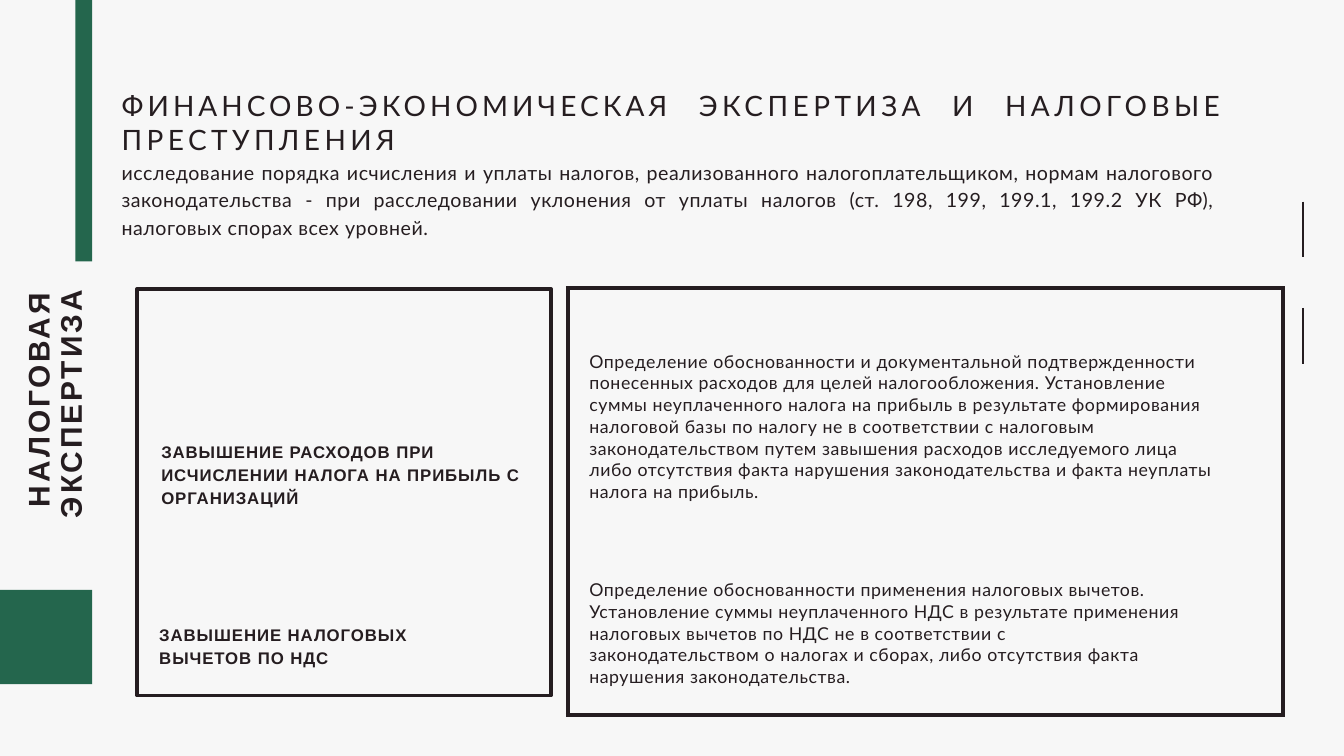
import copy

import pptx
import pptx.dml.color
import pptx.enum.shapes
import pptx.enum.text
import pptx.oxml.ns
import pptx.util
from lxml import etree
from pptx.util import Inches

DARK = "251D20"
GREEN = "24664D"
PALE = "F7F7F7"
ALIGN = pptx.enum.text.PP_ALIGN
qn = pptx.oxml.ns.qn


def color(value):
    return pptx.dml.color.RGBColor.from_string(value)


def write(shape, text, size=18, font="Lato", bold=False, spacing=0.0, align=ALIGN.LEFT,
          line_spacing=1.0, gap=0, indents=(0.01,), top=0, vertical=None):
    """Fill a shape with one paragraph per line of text; gap separates paragraphs, in points."""
    frame = shape.text_frame
    frame.word_wrap = True
    frame.auto_size = pptx.enum.text.MSO_AUTO_SIZE.NONE
    frame.vertical_anchor = pptx.enum.text.MSO_ANCHOR.TOP
    frame.margin_left = frame.margin_right = frame.margin_bottom = 0
    frame.margin_top = Inches(top)
    if vertical:
        frame._txBody.bodyPr.set("vert", vertical)
    frame.text = text
    for index, paragraph in enumerate(frame.paragraphs):
        paragraph.alignment = align
        paragraph.line_spacing = line_spacing
        paragraph.space_before = pptx.util.Pt(gap if index else 0)
        properties = paragraph._p.get_or_add_pPr()
        properties.set("marL", str(Inches(indents[index % len(indents)])))
        properties.set("indent", "0")
        etree.SubElement(properties, qn("a:buNone"))
        for run in paragraph.runs:
            run.font.size = pptx.util.Pt(size)
            run.font.name = font
            run.font.bold = bold
            run.font.color.rgb = color(DARK)
            run._r.get_or_add_rPr().set("spc", str(round(spacing * 100)))


presentation = pptx.Presentation()
presentation.slide_width = Inches(20)
presentation.slide_height = Inches(11.25)
slide = presentation.slides.add_slide(presentation.slide_layouts[1])
slide.background.fill.solid()
slide.background.fill.fore_color.rgb = color(PALE)

# Heading and introduction
title = slide.shapes.title
introduction = slide.placeholders[1]
for placeholder, top, width, height in ((title, 1.19, 16.43, 1.15),
                                        (introduction, 2.34, 16.28, 1.21)):
    placeholder.left, placeholder.top = Inches(1.8), Inches(top)
    placeholder.width, placeholder.height = Inches(width), Inches(height)
write(title, "ФИНАНСОВО-ЭКОНОМИЧЕСКАЯ ", size=30, spacing=4.4, align=ALIGN.JUSTIFY, top=0.13)
# The rest of the heading is tracked a little wider
heading = title.text_frame.paragraphs[0]
heading._p.append(copy.deepcopy(heading.runs[0]._r))
heading.runs[1].text = "ЭКСПЕРТИЗА И НАЛОГОВЫЕ ПРЕСТУПЛЕНИЯ"
heading.runs[1]._r.get_or_add_rPr().set("spc", "480")
write(introduction,
      "исследование порядка исчисления и уплаты налогов, реализованного налогоплательщиком, "
      "нормам налогового законодательства - при расследовании уклонения от уплаты налогов "
      "(ст. 198, 199, 199.1, 199.2 УК РФ), налоговых спорах всех уровней.",
      size=21, spacing=0.6, align=ALIGN.JUSTIFY, line_spacing=1.16)

# Green bars and the panel of violations: left, top, width, height, fill, line width
for left, top, width, height, fill, line_width in (
    (1.12, 0, 0.25, 3.89, GREEN, 0),
    (0, 8.78, 1.37, 1.4, GREEN, 0),
    (2.04, 4.3, 6.16, 6.05, PALE, 4.15),
):
    rectangle = slide.shapes.add_shape(
        pptx.enum.shapes.MSO_SHAPE.RECTANGLE,
        Inches(left), Inches(top), Inches(width), Inches(height))
    rectangle.shadow.inherit = False
    rectangle.fill.solid()
    rectangle.fill.fore_color.rgb = color(fill)
    if line_width:
        rectangle.line.color.rgb = color(DARK)
        rectangle.line.width = pptx.util.Pt(line_width)
    else:
        rectangle.line.fill.background()
violations = rectangle

# Ticks at the right edge, then the frame of the findings: from x, y to x, y, width
for x1, y1, x2, y2, line_width in (
    (19.39, 4.58, 19.39, 5.41, 3),
    (19.39, 3, 19.39, 3.83, 3),
    (8.42, 4.28, 19.12, 4.28, 4.15),
    (8.45, 4.31, 8.45, 10.61, 4.15),
    (8.42, 10.64, 19.12, 10.64, 4.15),
    (19.09, 4.31, 19.09, 10.61, 4.15),
):
    line = slide.shapes.add_connector(
        pptx.enum.shapes.MSO_CONNECTOR.STRAIGHT,
        Inches(x1), Inches(y1), Inches(x2), Inches(y2))
    line.line.color.rgb = color(DARK)
    line.line.width = pptx.util.Pt(line_width)
    etree.SubElement(line._element.spPr, qn("a:effectLst"))

# Section label, read upwards
label = slide.shapes.add_textbox(Inches(0.35), Inches(4.28), Inches(0.98), Inches(3.82))
write(label, "НАЛОГОВАЯ ЭКСПЕРТИЗА", size=32, font="Arial", bold=True, spacing=3.1,
      align=ALIGN.RIGHT, line_spacing=pptx.util.Pt(34.5), top=0.04, vertical="vert270")

# Violations and what the examination establishes
write(violations,
      "ЗАВЫШЕНИЕ РАСХОДОВ ПРИ\vИСЧИСЛЕНИИ НАЛОГА НА ПРИБЫЛЬ С\vОРГАНИЗАЦИЙ\n"
      "ЗАВЫШЕНИЕ НАЛОГОВЫХ\vВЫЧЕТОВ ПО НДС",
      font="Arial", bold=True, spacing=1, line_spacing=1.15, gap=121,
      indents=(0.36, 0.33), top=2.23)
findings = slide.shapes.add_textbox(Inches(8.76), Inches(5.2), Inches(9.32), Inches(5.4))
write(findings,
      "Определение обоснованности и документальной подтвержденности понесенных расходов "
      "для целей налогообложения. Установление суммы неуплаченного налога на прибыль "
      "в результате формирования налоговой базы по налогу не в соответствии с налоговым "
      "законодательством путем завышения расходов исследуемого лица либо отсутствия факта "
      "нарушения законодательства и факта неуплаты налога на прибыль.\n"
      "Определение обоснованности применения налоговых вычетов. Установление суммы "
      "неуплаченного НДС в результате применения налоговых вычетов по НДС "
      "не в соответствии с\vзаконодательством о налогах и сборах, либо отсутствия факта "
      "нарушения законодательства.",
      size=19, spacing=0.65, line_spacing=1.02, gap=82, top=0.01)

presentation.save("out.pptx")
